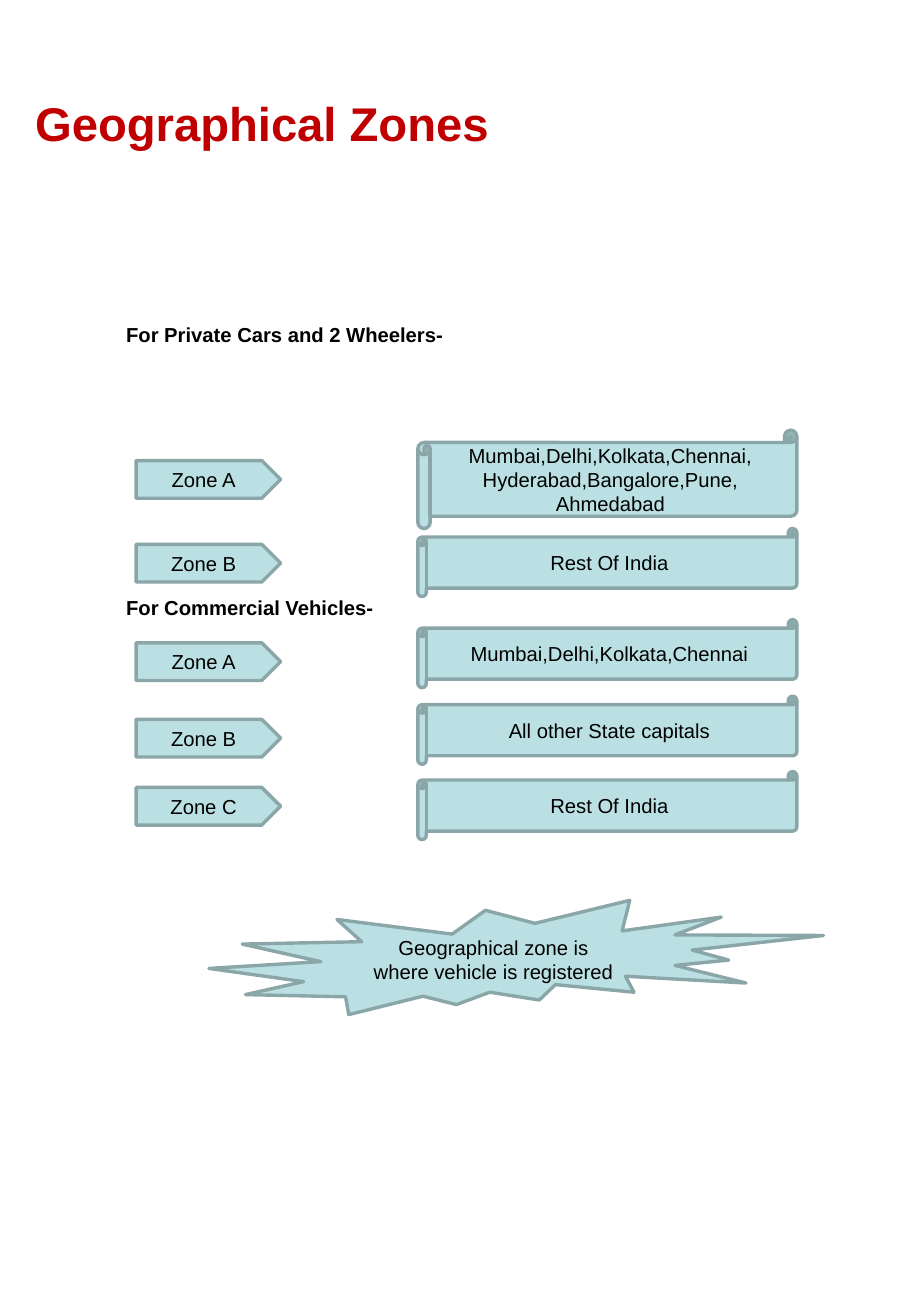
from pptx import Presentation
from pptx.dml.color import RGBColor
from pptx.enum.shapes import MSO_SHAPE
from pptx.enum.text import MSO_ANCHOR, PP_ALIGN
from pptx.util import Inches, Pt

RED = RGBColor(0xC0, 0x00, 0x00)
BLACK = RGBColor(0x00, 0x00, 0x00)
PALE_TEAL = RGBColor(0xBB, 0xE0, 0xE3)
GREY_TEAL = RGBColor(0x8A, 0xA6, 0xA8)

PRIVATE_ZONES = [
    ("Zone A", 3.79, "Mumbai,Delhi,Kolkata,Chennai, Hyderabad,Bangalore,Pune, Ahmedabad", 3.54, 0.81),
    ("Zone B", 4.48, "Rest Of India", 4.35, 0.56),
]
COMMERCIAL_ZONES = [
    ("Zone A", 5.29, "Mumbai,Delhi,Kolkata,Chennai", 5.1, 0.56),
    ("Zone B", 5.92, "All other State capitals", 5.73, 0.56),
    ("Zone C", 6.48, "Rest Of India", 6.35, 0.56),
]


def write(tf, text, size=12, color=BLACK, bold=False, align=PP_ALIGN.LEFT):
    tf.word_wrap = True
    tf.vertical_anchor = MSO_ANCHOR.MIDDLE
    p = tf.paragraphs[0]
    p.alignment = align
    r = p.add_run()
    r.text = text
    r.font.name = "Arial"
    r.font.size = Pt(size)
    r.font.bold = bold
    r.font.color.rgb = color


class ZoneSlide:
    def __init__(self, prs):
        self.s = prs.slides.add_slide(prs.slide_layouts[5])
        self.fill = PALE_TEAL
        self.line = GREY_TEAL

    def title(self, text, left, top, width, height):
        sp = self.s.shapes.title
        sp.left, sp.top = Inches(left), Inches(top)
        sp.width, sp.height = Inches(width), Inches(height)
        tf = sp.text_frame
        tf.margin_left = tf.margin_right = Inches(0.11)
        write(tf, text, size=28, color=RED, bold=True)

    def heading(self, text, top):
        sp = self.s.shapes.add_textbox(Inches(0.94), Inches(top), Inches(6.37), Inches(0.3))
        write(sp.text_frame, text, bold=True)

    def shape(self, kind, text, left, top, width, height):
        sp = self.s.shapes.add_shape(kind, Inches(left), Inches(top), Inches(width), Inches(height))
        sp.shadow.inherit = False
        sp.fill.solid()
        sp.fill.fore_color.rgb = self.fill
        sp.line.color.rgb = self.line
        sp.line.width = Pt(2)
        write(sp.text_frame, text, align=PP_ALIGN.CENTER)

    def zones(self, rows):
        for zone, zone_top, places, top, height in rows:
            self.shape(MSO_SHAPE.PENTAGON, zone, 1.12, zone_top, 1.19, 0.31)
            self.shape(MSO_SHAPE.HORIZONTAL_SCROLL, places, 3.44, top, 3.12, height)


def main():
    prs = Presentation()
    prs.slide_width, prs.slide_height = Inches(7.5), Inches(10.83)
    slide = ZoneSlide(prs)
    slide.title("Geographical Zones", 0.18, 0.43, 7.14, 1.16)
    slide.heading("For Private Cars and 2 Wheelers-", 2.6)
    slide.zones(PRIVATE_ZONES)
    slide.heading("For Commercial Vehicles-", 4.85)
    slide.zones(COMMERCIAL_ZONES)
    slide.shape(MSO_SHAPE.EXPLOSION2, "Geographical zone is where vehicle is registered",
                1.72, 7.41, 5.06, 0.94)
    prs.save("out.pptx")


if __name__ == "__main__":
    main()
